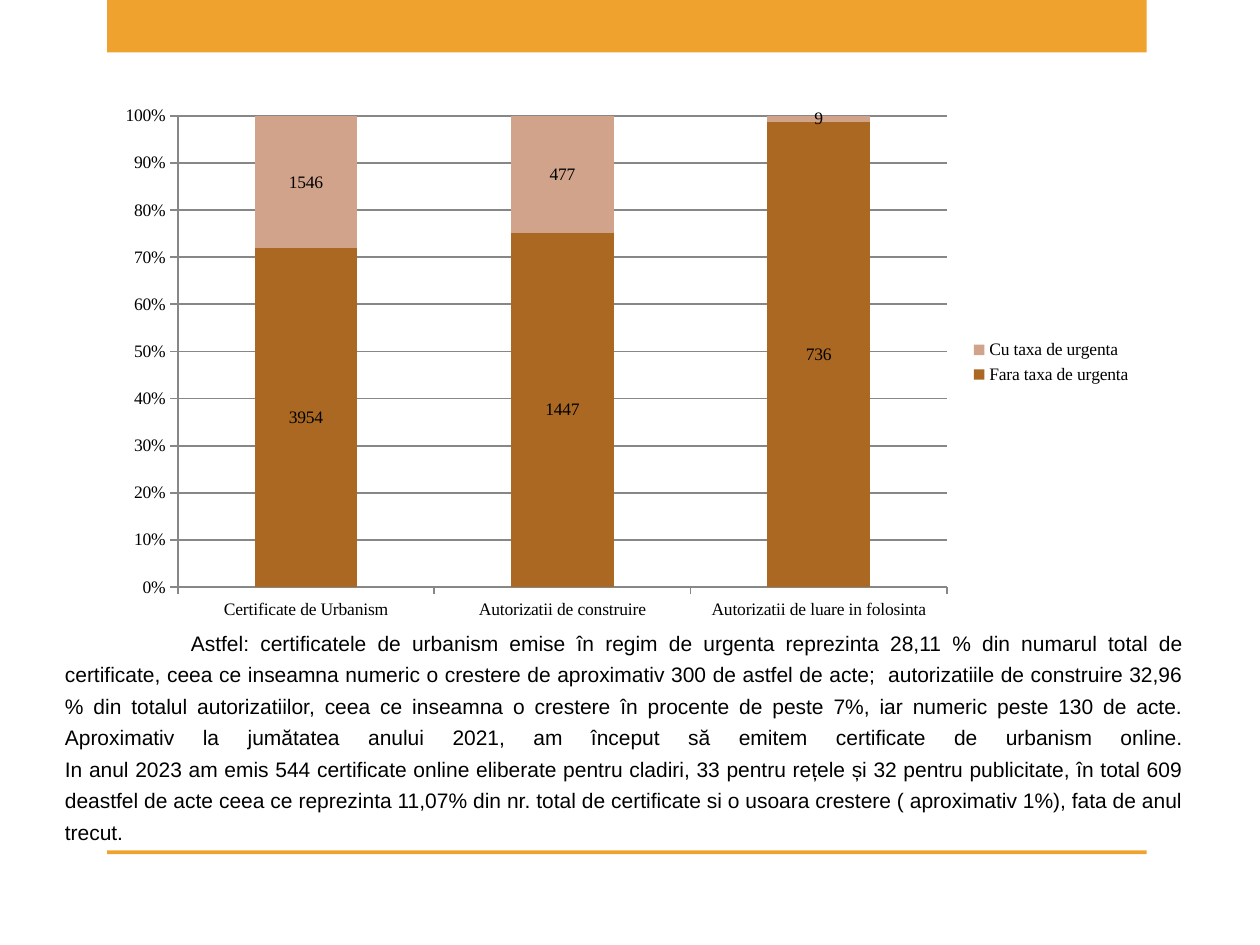
from lxml import etree
from pptx import Presentation
from pptx.chart.data import CategoryChartData
from pptx.dml.color import RGBColor
from pptx.enum.chart import XL_CHART_TYPE as ChartType
from pptx.enum.chart import XL_LEGEND_POSITION as LegendPosition
from pptx.enum.chart import XL_TICK_MARK as TickMark
from pptx.enum.shapes import MSO_SHAPE as ShapeType
from pptx.enum.text import MSO_ANCHOR as Anchor
from pptx.enum.text import PP_ALIGN as Align
from pptx.oxml.ns import qn
from pptx.util import Pt

COLORS = {
    "band": "F0A22E",
    "text": "000000",
    "grid": "878787",
    "standard": "AA6823",
    "urgent": "D1A38A",
}

CATEGORIES = [
    "Certificate de Urbanism",
    "Autorizatii de construire",
    "Autorizatii de luare in folosinta",
]
SERIES = [
    ("Fara taxa de urgenta", (3954, 1447, 736), "standard"),
    ("Cu taxa de urgenta", (1546, 477, 9), "urgent"),
]

# Line breaks inside the single justified paragraph
COMMENTARY = "\v".join([
    "Astfel: certificatele de urbanism emise în regim de urgenta reprezinta "
    "28,11 % din numarul total de certificate, ceea ce inseamna numeric o "
    "crestere de aproximativ 300 de astfel de acte;  autorizatiile de "
    "construire 32,96 % din totalul autorizatiilor, ceea ce inseamna o "
    "crestere în procente de peste 7%, iar numeric peste 130 de acte.",
    "Aproximativ la jumătatea anului 2021, am început să emitem certificate "
    "de urbanism online.",
    "In anul 2023 am emis 544 certificate online eliberate pentru cladiri, "
    "33 pentru rețele și 32 pentru publicitate, în total 609 deastfel de acte "
    "ceea ce reprezinta 11,07% din nr. total de certificate si o usoara "
    "crestere ( aproximativ 1%), fata de anul trecut.",
])


def color(name):
    return RGBColor.from_string(COLORS[name])


def add_band(slide, top, height):
    band = slide.shapes.add_shape(
        ShapeType.RECTANGLE, Pt(61.2), Pt(top), Pt(594), Pt(height))
    band.shadow.inherit = False
    band.fill.solid()
    band.fill.fore_color.rgb = color("band")
    band.line.fill.background()


def add_text(slide, text, left, top, width, height, *, size=12, font="Arial",
             fill="text", align=Align.JUSTIFY, anchor=Anchor.BOTTOM,
             line_spacing=18, first_indent=0):
    frame = slide.shapes.add_textbox(
        Pt(left), Pt(top), Pt(width), Pt(height)).text_frame
    frame.word_wrap = True
    frame.vertical_anchor = anchor
    paragraph = frame.paragraphs[0]
    paragraph.text = text
    paragraph.alignment = align
    paragraph.line_spacing = Pt(line_spacing)
    properties = paragraph._p.get_or_add_pPr()
    properties.set("marL", "0")
    properties.set("indent", str(Pt(first_indent)))
    for run in paragraph.runs:
        run.font.size = Pt(size)
        run.font.name = font
        run.font.color.rgb = color(fill)


def set_plot_layout(chart, **fractions):
    """Place the inner plot area by fractions of the chart's size."""
    plot_area = chart._chartSpace.chart.plotArea
    layout = plot_area.find(qn("c:layout"))
    if layout is None:
        layout = etree.Element(qn("c:layout"))
        plot_area.insert(0, layout)
    manual = etree.SubElement(layout, qn("c:manualLayout"))
    settings = {"layoutTarget": "inner", "xMode": "edge", "yMode": "edge",
                **fractions}
    for tag, value in settings.items():
        etree.SubElement(manual, qn(f"c:{tag}")).set("val", str(value))


def style_axis(axis):
    axis.major_tick_mark = TickMark.OUTSIDE
    axis.minor_tick_mark = TickMark.NONE
    axis.format.line.color.rgb = color("grid")
    axis.format.line.width = Pt(1)


def add_urgency_chart(slide):
    data = CategoryChartData()
    data.categories = CATEGORIES
    for name, values, _ in SERIES:
        data.add_series(name, values)
    chart = slide.shapes.add_chart(
        ChartType.COLUMN_STACKED_100,
        Pt(60), Pt(54), Pt(594), Pt(306), data).chart
    chart.has_title = False
    chart.font.name = "Times New Roman"
    chart.font.size = Pt(10)
    chart.font.color.rgb = color("text")
    set_plot_layout(chart, x=0.07, y=0.04, w=0.74, h=0.88)

    # Axes and gridlines
    style_axis(chart.category_axis)
    value_axis = chart.value_axis
    style_axis(value_axis)
    value_axis.minimum_scale = 0
    value_axis.maximum_scale = 1
    value_axis.major_unit = 0.1
    value_axis.tick_labels.number_format = "0%"
    value_axis.tick_labels.number_format_is_linked = False
    value_axis.has_major_gridlines = True
    value_axis.major_gridlines.format.line.color.rgb = color("grid")
    value_axis.major_gridlines.format.line.width = Pt(1)

    # Stacked columns with their values
    plot = chart.plots[0]
    plot.vary_by_categories = False
    plot.gap_width = 150
    plot.overlap = 100
    for series, (_, _, fill) in zip(plot.series, SERIES):
        series.format.fill.solid()
        series.format.fill.fore_color.rgb = color(fill)
        series.data_labels.show_value = True

    # Legend
    chart.has_legend = True
    chart.legend.position = LegendPosition.RIGHT
    chart.legend.include_in_layout = False


def main():
    presentation = Presentation()
    presentation.slide_width = Pt(720)
    presentation.slide_height = Pt(540)
    slide = presentation.slides.add_slide(presentation.slide_layouts[6])

    # Bands at the top and bottom
    add_band(slide, 0, 30)
    add_band(slide, 486, 2.16)

    # Commentary below the chart
    add_text(slide, COMMENTARY, 30, 360, 653.76, 126, first_indent=72)

    add_urgency_chart(slide)
    presentation.save("out.pptx")


if __name__ == "__main__":
    main()
